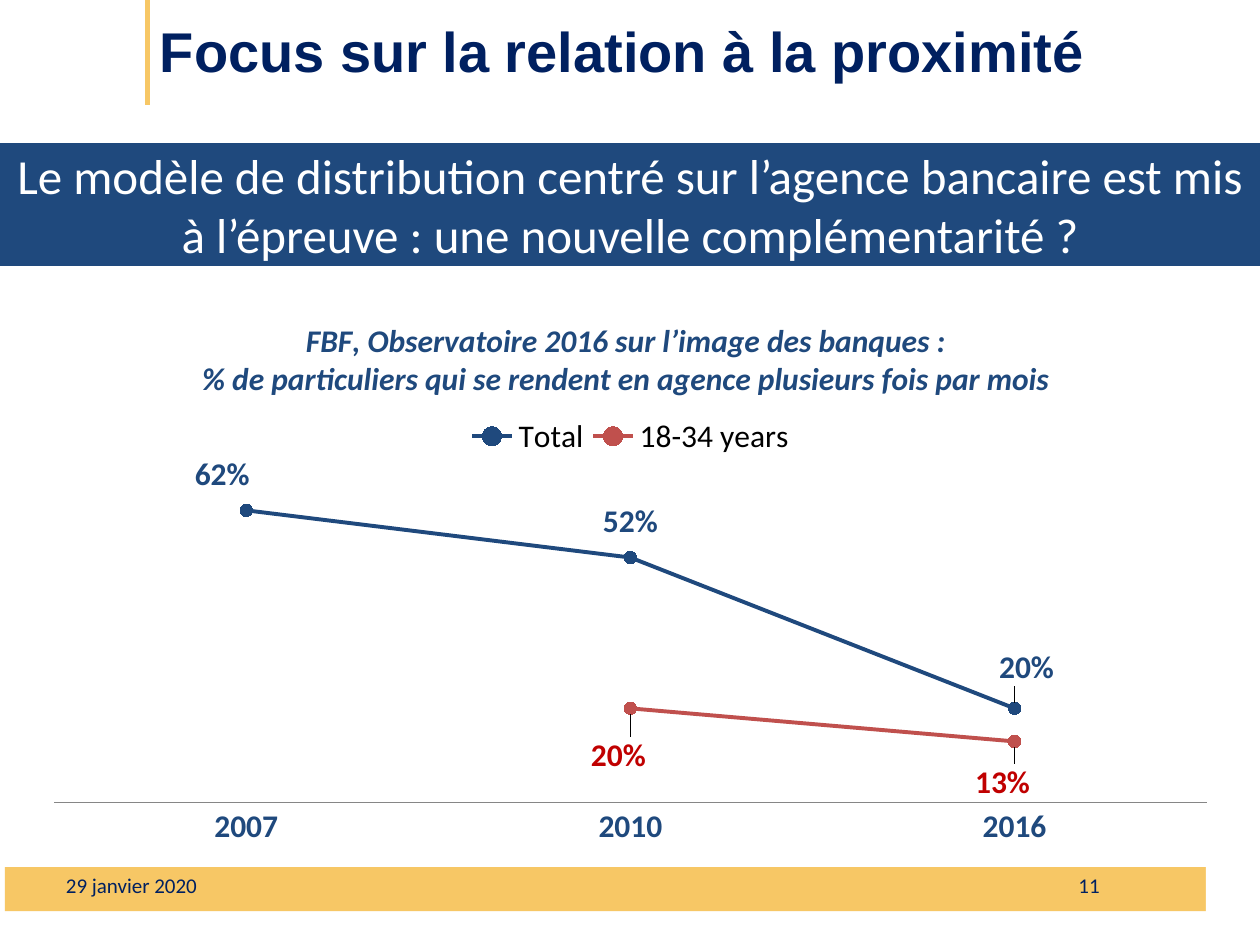
import pptx
import pptx.util
import pptx.chart.data
import pptx.dml.color
import pptx.enum.chart
import pptx.enum.shapes
import pptx.enum.text
import pptx.oxml
import pptx.oxml.ns

Cm, Pt = pptx.util.Cm, pptx.util.Pt
ALIGN = pptx.enum.text.PP_ALIGN
MIDDLE = pptx.enum.text.MSO_ANCHOR.MIDDLE
LABEL = pptx.enum.chart.XL_LABEL_POSITION
NAVY, BLUE, GOLD, WHITE = "002060", "1F497D", "F7C765", "FFFFFF"
RED, DARK_RED, LABEL_RED = "C0504D", "632523", "C00000"


def rgb(value):
    return pptx.dml.color.RGBColor.from_string(value)


def paint(fill, value):
    fill.solid()
    fill.fore_color.rgb = rgb(value)


def style(font, size, color, name="Calibri", bold=False, italic=False):
    font.name, font.size, font.bold, font.italic = name, Pt(size), bold, italic
    font.color.rgb = rgb(color)


def write(tf, text, align, *args, **kwargs):
    tf.word_wrap = True
    tf.vertical_anchor = MIDDLE
    p = tf.paragraphs[0]
    p.alignment = align
    r = p.add_run()
    r.text = text
    style(r.font, *args, **kwargs)


def add_rect(s, x, y, w, h, color):
    sp = s.shapes.add_shape(pptx.enum.shapes.MSO_SHAPE.RECTANGLE,
                            Cm(x), Cm(y), Cm(w), Cm(h))
    sp.shadow.inherit = False
    paint(sp.fill, color)
    sp.line.fill.background()
    return sp


def add_layout(parent, after, x, y, w=None, h=None, edge=True, inner=False):
    """Place a chart part by fractions of the chart's size."""
    for old in parent.findall(pptx.oxml.ns.qn("c:layout")):
        parent.remove(old)
    items = [("layoutTarget", "inner")] if inner else []
    if edge:
        items += [("xMode", "edge"), ("yMode", "edge")]
    items += [("x", x), ("y", y)]
    if w is not None:
        items += [("w", w), ("h", h)]
    body = "".join(f'<c:{tag} val="{val}"/>' for tag, val in items)
    layout = pptx.oxml.parse_xml(
        f'<c:layout {pptx.oxml.ns.nsdecls("c")}>'
        f"<c:manualLayout>{body}</c:manualLayout></c:layout>")
    if after is None:
        parent.insert(0, layout)
    else:
        parent.find(pptx.oxml.ns.qn(after)).addnext(layout)


def header(s, x, y, w, h):
    # Accent line on the left edge, title beside it
    line = s.shapes.add_connector(pptx.enum.shapes.MSO_CONNECTOR.STRAIGHT,
                                  Cm(x), Cm(0), Cm(x), Cm(y + h))
    line.line.color.rgb = rgb(GOLD)
    line.line.width = Pt(2.75)
    line._element.spPr.append(pptx.oxml.parse_xml(
        f'<a:effectLst {pptx.oxml.ns.nsdecls("a")}/>'))
    title = s.shapes.title
    title.left, title.top, title.width, title.height = Cm(x), Cm(y), Cm(w), Cm(h)
    write(title.text_frame, "Focus sur la relation à la proximité",
          ALIGN.LEFT, 32, NAVY, "Arial", bold=True)


def banner(s, x, y, w, h):
    sp = add_rect(s, x, y, w, h, BLUE)
    sp.line.color.rgb = rgb(BLUE)
    sp.line.width = Pt(2)
    write(sp.text_frame, "Le modèle de distribution centré sur l’agence bancaire "
          "est mis à l’épreuve : une nouvelle complémentarité ?",
          ALIGN.CENTER, 28, WHITE)


def footer(s, x, y, w, h):
    # Gold band, cut off by a white block at the right
    add_rect(s, x, y, w, h, GOLD)
    add_rect(s, x + w - 0.58, y - 0.36, 0.71, 1.68, WHITE)
    for left, text, align in ((x + 0.98, "29 janvier 2020", ALIGN.LEFT),
                              (x + 16.4, "11", ALIGN.RIGHT)):
        box = s.shapes.add_textbox(Cm(left), Cm(y - 0.15), Cm(5.92), Cm(1.02))
        write(box.text_frame, text, align, 12, NAVY)


def style_series(series, color, label_color, position, offsets):
    series.smooth = False
    series.format.line.color.rgb = rgb(color)
    series.format.line.width = Pt(2.25)
    series.marker.style = pptx.enum.chart.XL_MARKER_STYLE.CIRCLE
    series.marker.size = 7
    paint(series.marker.format.fill, color)
    series.marker.format.line.color.rgb = rgb(color)
    for i, (dx, dy) in offsets.items():
        label = series.points[i].data_label
        style(label.font, 18, label_color, bold=True)
        label.position = position
        add_layout(series.data_labels._element.findall(
            pptx.oxml.ns.qn("c:dLbl"))[-1], "c:idx", dx, dy, edge=False)
    series.data_labels.show_value = True


def visits_chart(s, x, y, w, h):
    data = pptx.chart.data.CategoryChartData(number_format="0%")
    data.categories = ["2007", "2010", "2016"]
    data.add_series("Total", (0.62, 0.52, 0.2))
    data.add_series("18-34 years", (None, 0.2, 0.13))
    chart = s.shapes.add_chart(pptx.enum.chart.XL_CHART_TYPE.LINE_MARKERS,
                               Cm(x), Cm(y), Cm(w), Cm(h), data).chart
    style(chart.font, 18, "000000")
    plot = chart.plots[0]
    plot.vary_by_categories = False

    # Title
    tf = chart.chart_title.text_frame
    lines = ("FBF, Observatoire 2016 sur l’image des banques :",
             "% de particuliers qui se rendent en agence plusieurs fois par mois")
    for i, text in enumerate(lines):
        p = tf.add_paragraph() if i else tf.paragraphs[0]
        p.alignment = ALIGN.CENTER
        r = p.add_run()
        r.text = text
        style(r.font, 18, BLUE, bold=True, italic=True)
    add_layout(chart.chart_title._element, "c:tx", 0.14, 0.04)

    # Legend and plot area
    chart.has_legend = True
    chart.legend.position = pptx.enum.chart.XL_LEGEND_POSITION.TOP
    chart.legend.include_in_layout = False
    style(chart.legend.font, 18, "000000")
    add_layout(chart.legend._element, "c:legendPos", 0.36, 0.22, 0.28, 0.07)
    add_layout(plot._element.getparent(), None, 0.02, 0.32, 0.96, 0.59, inner=True)

    # Axes
    tick_none = pptx.enum.chart.XL_TICK_MARK.NONE
    years, share = chart.category_axis, chart.value_axis
    years.major_tick_mark = years.minor_tick_mark = tick_none
    years.format.line.color.rgb = rgb("868686")
    style(years.tick_labels.font, 18, BLUE, bold=True)
    share.minimum_scale, share.maximum_scale = 0, 0.7
    share.has_major_gridlines = False
    share.visible = False

    # Series
    total, young = plot.series
    style_series(total, BLUE, BLUE, LABEL.ABOVE,
                 {0: (-0.02, -0.01), 1: (0, -0.01), 2: (0.01, -0.02)})
    style_series(young, RED, LABEL_RED, LABEL.BELOW,
                 {1: (-0.01, 0.03), 2: (-0.01, 0.02)})
    last = young.points[2]
    last.marker.style = pptx.enum.chart.XL_MARKER_STYLE.CIRCLE
    last.marker.size = 7
    paint(last.marker.format.fill, DARK_RED)
    last.marker.format.line.color.rgb = rgb(DARK_RED)
    last.format.line.color.rgb = rgb(RED)
    last.format.line.width = Pt(2.25)


def main():
    prs = pptx.Presentation()
    prs.slide_width, prs.slide_height = Cm(25.4), Cm(19.05)
    s = prs.slides.add_slide(prs.slide_layouts[5])
    footer(s, 0.1, 17.48, 24.79, 0.89)
    header(s, 2.97, -0.08, 21.34, 2.2)
    visits_chart(s, 0.61, 5.92, 24.2, 11.28)
    banner(s, 0, 2.92, 25.4, 2.4)
    prs.save("out.pptx")


if __name__ == "__main__":
    main()
